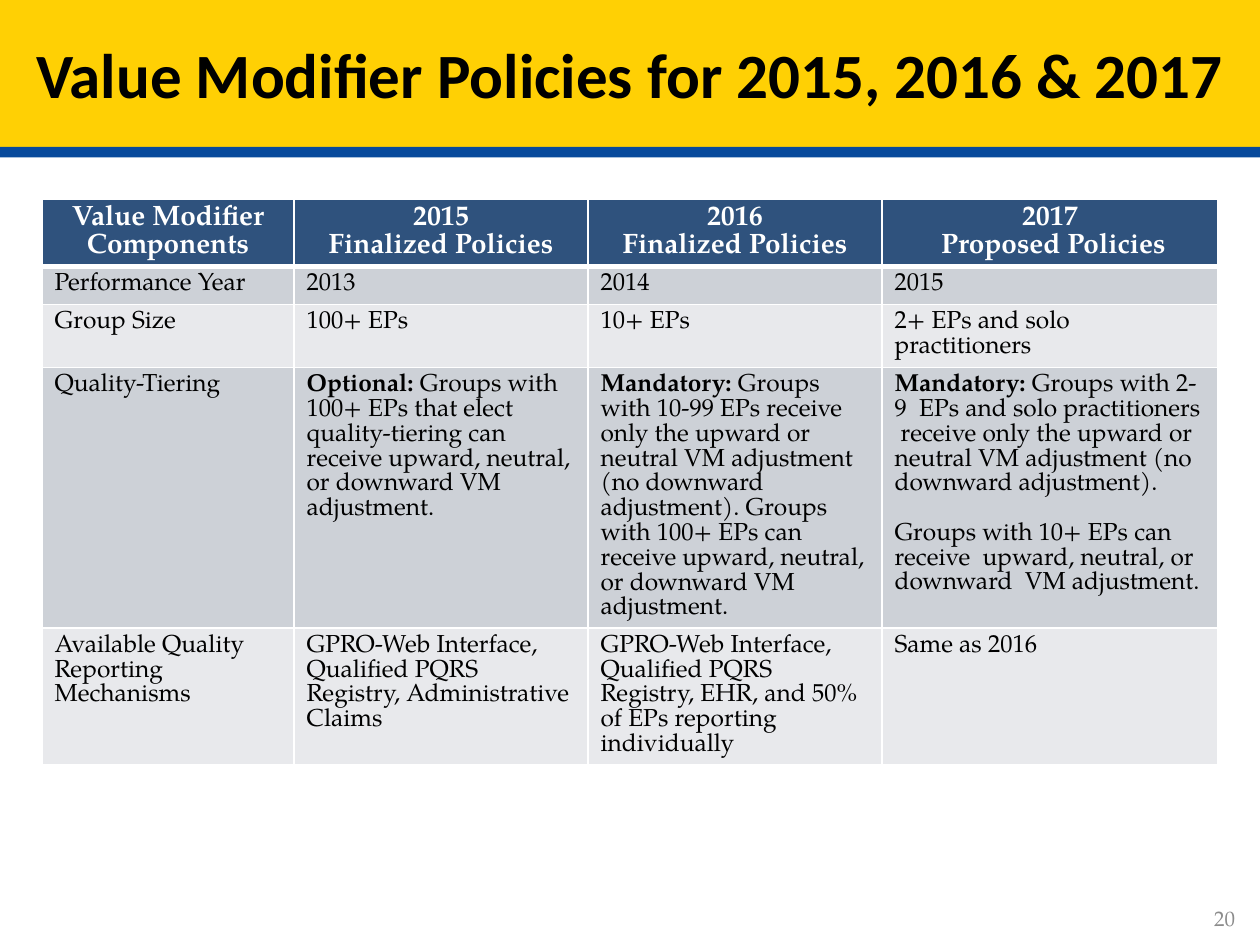
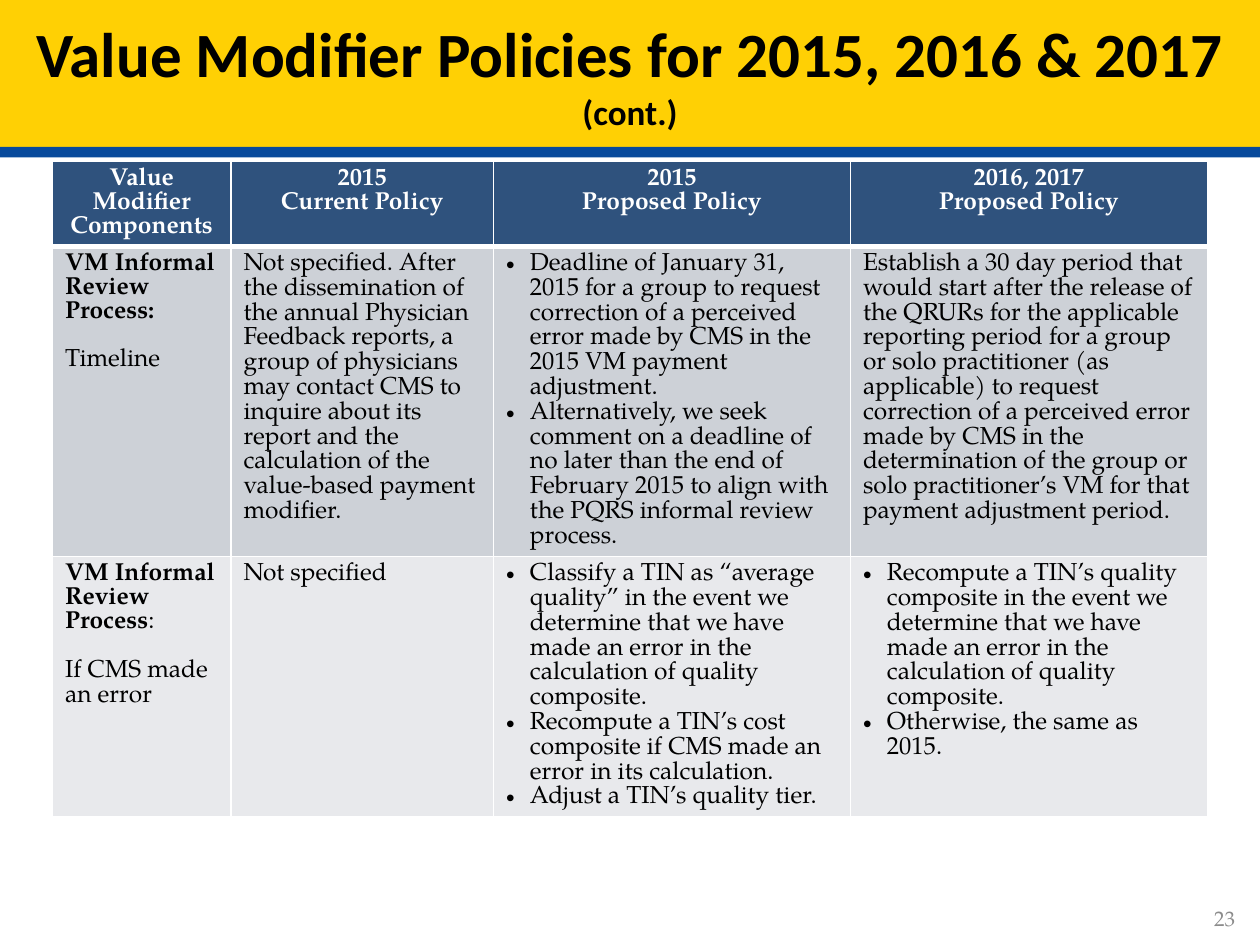
from dataclasses import dataclass

from lxml.etree import SubElement
from pptx import Presentation
from pptx.dml.color import RGBColor
from pptx.enum.shapes import MSO_SHAPE as Shape
from pptx.enum.text import MSO_ANCHOR as Anchor, MSO_AUTO_SIZE as AutoSize, PP_ALIGN as Align
from pptx.oxml.ns import qn
from pptx.util import Emu, Inches, Pt

GOLD = RGBColor(0xFF, 0xD0, 0x04)
BLUE = RGBColor(0x08, 0x4A, 0x9C)
NAVY = RGBColor(0x2F, 0x52, 0x7D)
BAND_DARK = RGBColor(0xCD, 0xD1, 0xD7)
BAND_LIGHT = RGBColor(0xE8, 0xE9, 0xEC)
WHITE = RGBColor(0xFF, 0xFF, 0xFF)
BLACK = RGBColor(0, 0, 0)
GREY = RGBColor(0x8C, 0x8C, 0x8C)

TITLE_FONT, BODY_FONT = "Calibri", "TeX Gyre Pagella"
BODY_SIZE = 14
BULLET_INDENT = Inches(0.19)

SLIDE_WIDTH, SLIDE_HEIGHT = Inches(10), Inches(7.5)
UNIT = SLIDE_WIDTH // 120  # the slide is a grid of 120 columns by 90 rows
TITLE_BOX = (0, 0, 120, 14)
STRIPE_BOX = (0, 14, 120, 1)
NUMBER_BOX = (90.8, 85, 28, 4.8)

TITLE = "Value Modifier Policies for 2015, 2016 & 2017"


@dataclass
class Para:
    text: str
    lead: str = ""  # bold opening words
    bullet: bool = False
    gap: bool = False  # one line of space above


def bullets(*texts):
    return [Para(text, bullet=True) for text in texts]


def units(*counts):
    return [Emu(round(count * UNIT)) for count in counts]


def add_run(paragraph, text, font, size, color, bold=False):
    run = paragraph.add_run()
    run.text = text
    run.font.name, run.font.size = font, Pt(size)
    run.font.color.rgb, run.font.bold = color, bold


def add_title(slide, box, runs):
    title = slide.shapes.title
    title.left, title.top, title.width, title.height = units(*box)
    title.fill.solid()
    title.fill.fore_color.rgb = GOLD
    frame = title.text_frame
    frame.word_wrap, frame.auto_size = True, AutoSize.NONE
    frame.vertical_anchor = Anchor.MIDDLE
    paragraph = frame.paragraphs[0]
    paragraph.alignment = Align.CENTER
    for text, size in runs:
        add_run(paragraph, text, TITLE_FONT, size, BLACK, bold=True)


def add_stripe(slide, box):
    stripe = slide.shapes.add_shape(Shape.RECTANGLE, *units(*box))
    stripe.shadow.inherit = False
    stripe.fill.solid()
    stripe.fill.fore_color.rgb = BLUE
    stripe.line.fill.background()


def add_page_number(slide, box, number):
    frame = slide.shapes.add_textbox(*units(*box)).text_frame
    frame.word_wrap = True
    frame.vertical_anchor = Anchor.MIDDLE
    paragraph = frame.paragraphs[0]
    paragraph.alignment = Align.RIGHT
    add_run(paragraph, str(number), BODY_FONT, 12, GREY)


def set_bullet(paragraph):
    properties = paragraph._p.get_or_add_pPr()
    properties.set("marL", str(BULLET_INDENT))
    properties.set("indent", str(-BULLET_INDENT))
    SubElement(properties, qn("a:buFont")).set("typeface", "Arial")
    SubElement(properties, qn("a:buChar")).set("char", "•")


def style_cell(cell, fill, top=1, bottom=1):
    """Give the cell white borders (widths in points) and a solid fill."""
    properties = cell._tc.get_or_add_tcPr()
    for side, width in (("L", 1), ("R", 1), ("T", top), ("B", bottom)):
        border = SubElement(properties, qn(f"a:ln{side}"), w=str(Pt(width)))
        paint = SubElement(border, qn("a:solidFill"))
        SubElement(paint, qn("a:srgbClr"), val=str(WHITE))
    cell.fill.solid()
    cell.fill.fore_color.rgb = fill


def next_paragraph(frame, index):
    return frame.add_paragraph() if index else frame.paragraphs[0]


def fill_header(cell, lines, size):
    style_cell(cell, NAVY, bottom=3)
    for index, line in enumerate(lines):
        paragraph = next_paragraph(cell.text_frame, index)
        paragraph.alignment = Align.CENTER
        add_run(paragraph, line, BODY_FONT, size, WHITE, bold=True)


def fill_body(cell, content):
    paras = [Para(content)] if isinstance(content, str) else content
    for index, para in enumerate(paras):
        paragraph = next_paragraph(cell.text_frame, index)
        if para.gap:
            paragraph.space_before = Pt(BODY_SIZE)
        if para.bullet:
            set_bullet(paragraph)
        for text, bold in ((para.lead, True), (para.text, False)):
            if text:
                add_run(paragraph, text, BODY_FONT, BODY_SIZE, BLACK, bold)


def add_policy_table(slide, origin, columns, heights, header, header_size, body):
    box = (*origin, sum(columns), sum(heights))
    table = slide.shapes.add_table(len(heights), len(columns), *units(*box)).table
    for column, width in zip(table.columns, units(*columns)):
        column.width = width
    for row, height in zip(table.rows, units(*heights)):
        row.height = height
    for column, lines in enumerate(header):
        fill_header(table.cell(0, column), lines, header_size)
    for row, contents in enumerate(body, start=1):
        for column, content in enumerate(contents):
            cell = table.cell(row, column)
            style_cell(cell, BAND_DARK if row % 2 else BAND_LIGHT, top=3 if row == 1 else 1)
            fill_body(cell, content)


def add_policy_slide(deck, number, title_runs, **table):
    slide = deck.slides.add_slide(deck.slide_layouts[5])
    add_stripe(slide, STRIPE_BOX)
    add_title(slide, TITLE_BOX, title_runs)
    add_policy_table(slide, **table)
    add_page_number(slide, NUMBER_BOX, number)


POLICIES = [
    ["Performance Year", "2013", "2014", "2015"],
    ["Group Size", "100+ EPs", "10+ EPs", "2+ EPs and solo practitioners"],
    [
        "Quality-Tiering",
        [Para("Groups with 100+ EPs that elect quality-tiering can receive upward, "
              "neutral, or downward VM adjustment.", lead="Optional: ")],
        [Para("Groups with 10-99 EPs receive only the upward or neutral VM adjustment "
              "(no downward adjustment). Groups with 100+ EPs can receive upward, "
              "neutral, or downward VM adjustment.", lead="Mandatory: ")],
        [Para("Groups with 2-9  EPs and solo practitioners  receive only the upward or "
              "neutral VM adjustment (no downward adjustment).", lead="Mandatory: "),
         Para("Groups with 10+ EPs can receive  upward, neutral, or downward  "
              "VM adjustment.", gap=True)],
    ],
    [
        "Available Quality Reporting Mechanisms",
        "GPRO-Web Interface, Qualified PQRS Registry, Administrative Claims",
        "GPRO-Web Interface, Qualified PQRS Registry, EHR, and 50% of EPs "
        "reporting individually",
        "Same as 2016",
    ],
]

REVIEW_PROCESS = [
    [
        [Para("", lead="VM Informal Review Process:"), Para("Timeline", gap=True)],
        "Not specified. After the dissemination of the annual Physician Feedback "
        "reports, a group of physicians may contact CMS to inquire about its report "
        "and the calculation of the value-based payment modifier.",
        bullets(
            "Deadline of January 31, 2015 for a group to request correction of a "
            "perceived error made by CMS in the 2015 VM payment adjustment.",
            "Alternatively, we seek comment on a deadline of no later than the end of "
            "February 2015 to align with the PQRS informal review process."),
        "Establish a 30 day period that would start after the release of the QRURs for "
        "the applicable reporting period for a group or solo practitioner (as "
        "applicable) to request correction of a perceived error made by CMS in the "
        "determination of the group or solo practitioner’s VM for that payment "
        "adjustment period.",
    ],
    [
        [Para(":", lead="VM Informal Review Process"),
         Para("If CMS made an error", gap=True)],
        "Not specified",
        bullets(
            "Classify a TIN as “average quality” in the event we determine that we have "
            "made an error in the calculation of quality composite.",
            "Recompute a TIN’s cost composite if CMS made an error in its calculation.",
            "Adjust a TIN’s quality tier."),
        bullets(
            "Recompute a TIN’s quality composite in the event we determine that we have "
            "made an error in the calculation of quality composite.",
            "Otherwise, the same as 2015."),
    ],
]

COMPONENTS = ("Value Modifier", "Components")


def main():
    deck = Presentation()
    deck.slide_width, deck.slide_height = SLIDE_WIDTH, SLIDE_HEIGHT
    add_policy_slide(
        deck, 20, [(TITLE, 36)],
        origin=(4, 19), columns=(24, 28, 28, 32), heights=(6.3, 3.6, 6, 24.8, 13),
        header=[COMPONENTS, ("2015", "Finalized Policies"),
                ("2016", "Finalized Policies"), ("2017", " Proposed Policies")],
        header_size=16, body=POLICIES)
    add_policy_slide(
        deck, 23, [(TITLE, 36), (" ", 27), ("(cont.)", 20)],
        origin=(5, 15.4), columns=(17, 25, 34, 34), heights=(8, 29.5, 24.7),
        header=[COMPONENTS, ("2015", "Current Policy"),
                ("2015", "Proposed Policy"), ("2016, 2017", "Proposed Policy")],
        header_size=14, body=REVIEW_PROCESS)
    deck.save("out.pptx")


if __name__ == "__main__":
    main()
